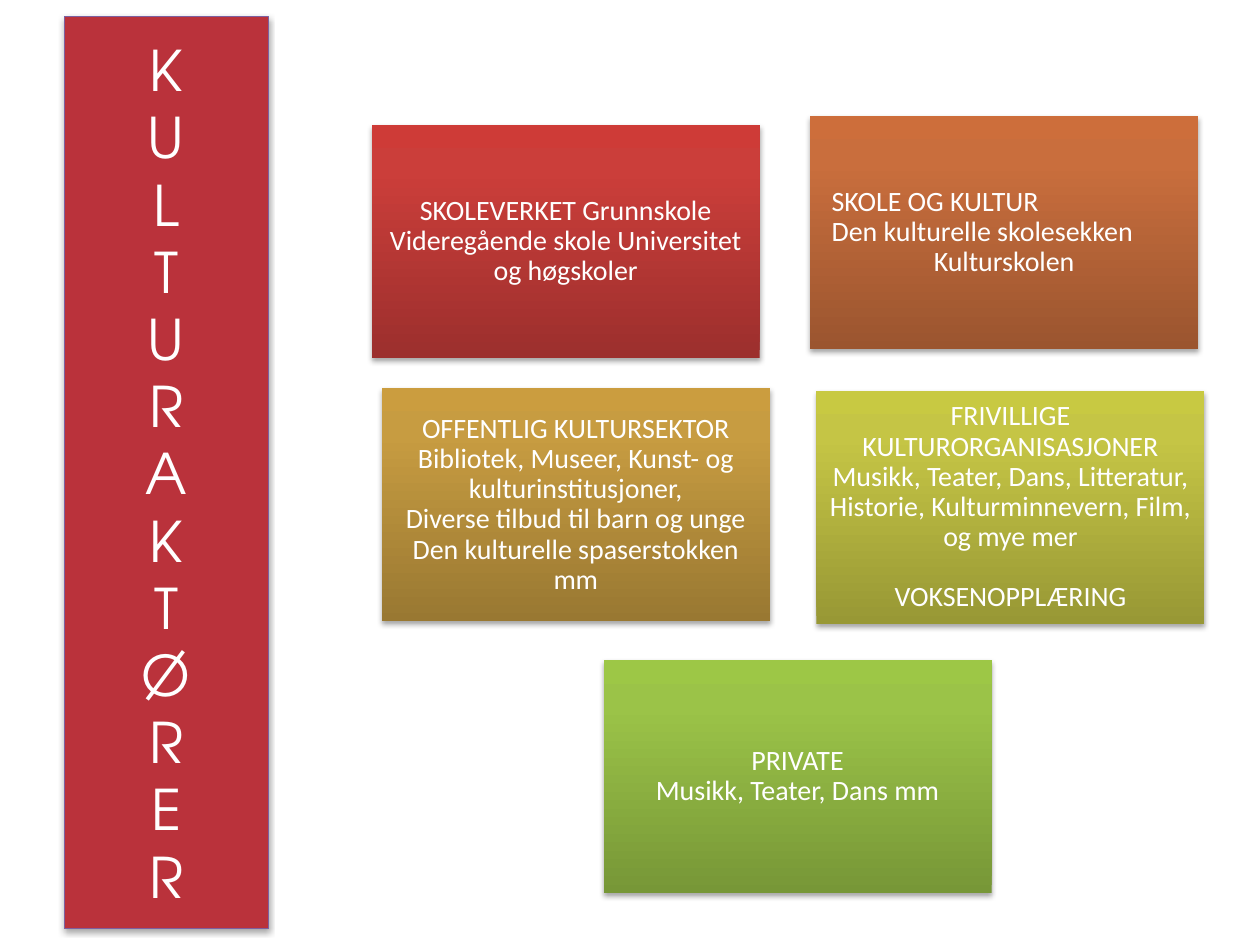
from copy import deepcopy

from lxml.etree import SubElement
from pptx import Presentation
from pptx.dml.color import RGBColor
from pptx.enum.shapes import MSO_SHAPE
from pptx.enum.text import MSO_ANCHOR, MSO_AUTO_SIZE, PP_ALIGN
from pptx.oxml.ns import qn
from pptx.util import Inches, Pt

WHITE = RGBColor(0xFF, 0xFF, 0xFF)
RED = RGBColor(0xBA, 0x32, 0x3B)
PURPLE = RGBColor(0x7D, 0x60, 0xA0)

TITLE = "KULTURAKTØRER"
TITLE_AREA = (0.51, 0.13, 1.62, 7.24)
BOX_SIZE = (3.08, 1.85)
STOPS = (0, 0.8, 1)
LEFT = {"alignment": PP_ALIGN.LEFT}
GAP = {"space_before": Pt(17)}
INDENT = Inches(0.1)

# Place, gradient colours from bottom to top, lines with their own format
BOXES = [
    ((2.95, 0.99), ("9C2F2D", "CB3E3A", "CE3B37"), [
        ("SKOLEVERKET Grunnskole Videregående skole Universitet og høgskoler", {}),
    ]),
    ((6.43, 0.92), ("9B552F", "C96E3D", "CD6E3B"), [
        ("SKOLE OG KULTUR", LEFT),
        ("Den kulturelle skolesekken", LEFT),
        ("Kulturskolen", {}),
    ]),
    ((3.03, 3.08), ("997832", "C79C41", "CB9D3F"), [
        ("OFFENTLIG KULTURSEKTOR", {}),
        ("Bibliotek, Museer, Kunst- og kulturinstitusjoner,", {}),
        ("Diverse tilbud til barn og unge", {}),
        ("Den kulturelle spaserstokken", {}),
        ("mm", {}),
    ]),
    ((6.48, 3.1), ("989835", "C5C545", "C8C942"), [
        ("FRIVILLIGE KULTURORGANISASJONER Musikk, Teater, Dans, Litteratur, "
         "Historie, Kulturminnevern, Film, og mye mer", {}),
        ("VOKSENOPPLÆRING", GAP),
    ]),
    ((4.79, 5.24), ("779737", "9BC348", "9DC746"), [
        ("PRIVATE", {}),
        ("Musikk, Teater, Dans mm", {}),
    ]),
]


def apply(item, values):
    for name, value in values.items():
        setattr(item, name, value)


def add_shadow(shape):
    shape.shadow.inherit = False
    effects = shape._element.spPr.find(qn("a:effectLst"))
    outer = SubElement(effects, qn("a:outerShdw"), blurRad=str(Pt(3.1)),
                       dist=str(Pt(1.8)), dir="5400000", rotWithShape="0")
    color = SubElement(outer, qn("a:srgbClr"), val="000000")
    SubElement(color, qn("a:alpha"), val="35000")


def fill_gradient(shape, colors):
    fill = shape.fill
    fill.gradient()
    fill.gradient_angle = 90
    stops = shape._element.spPr.find(qn("a:gradFill")).find(qn("a:gsLst"))
    stops.append(deepcopy(stops[0]))
    for stop, place, color in zip(fill.gradient_stops, STOPS, colors):
        stop.position = place
        stop.color.rgb = RGBColor.from_string(color)


def format_line(line, font, size, values):
    apply(line, {"alignment": PP_ALIGN.CENTER, **values})
    apply(line.font, {"name": font, "size": Pt(size)})
    line.font.color.rgb = WHITE


def add_title(slide):
    title = slide.shapes.title
    places = map(Inches, TITLE_AREA)
    apply(title, dict(zip(("left", "top", "width", "height"), places)))
    outline = SubElement(title._element.spPr, qn("a:prstGeom"), prst="roundRect")
    SubElement(outline, qn("a:avLst"))
    title.fill.solid()
    title.fill.fore_color.rgb = RED
    title.line.color.rgb = PURPLE
    title.line.width = Pt(0.75)
    add_shadow(title)
    frame = title.text_frame
    frame.text = "\n".join(TITLE)
    apply(frame, {"auto_size": MSO_AUTO_SIZE.NONE,
                  "vertical_anchor": MSO_ANCHOR.MIDDLE})
    for letter in frame.paragraphs:
        format_line(letter, "TeX Gyre Adventor", 32, {})


def add_box(slide, place, colors, lines):
    box = slide.shapes.add_shape(MSO_SHAPE.RECTANGLE, *map(Inches, place + BOX_SIZE))
    fill_gradient(box, colors)
    box.line.fill.background()
    add_shadow(box)
    frame = box.text_frame
    frame.text = "\n".join(text for text, _ in lines)
    apply(frame, {"word_wrap": True, "vertical_anchor": MSO_ANCHOR.MIDDLE})
    apply(frame, {f"margin_{side}": Inches(0.07)
                  for side in ("left", "top", "right", "bottom")})
    for line, (_, values) in zip(frame.paragraphs, lines):
        format_line(line, "Calibri", 16, {"line_spacing": 0.9, **values})
        if values is LEFT:
            line._p.get_or_add_pPr().set("marL", str(INDENT))


def main():
    deck = Presentation()
    deck.slide_width, deck.slide_height = Inches(10), Inches(7.5)
    slide = deck.slides.add_slide(deck.slide_layouts.get_by_name("Title Only"))
    add_title(slide)
    for place, colors, lines in BOXES:
        add_box(slide, place, colors, lines)
    deck.save("out.pptx")


if __name__ == "__main__":
    main()
